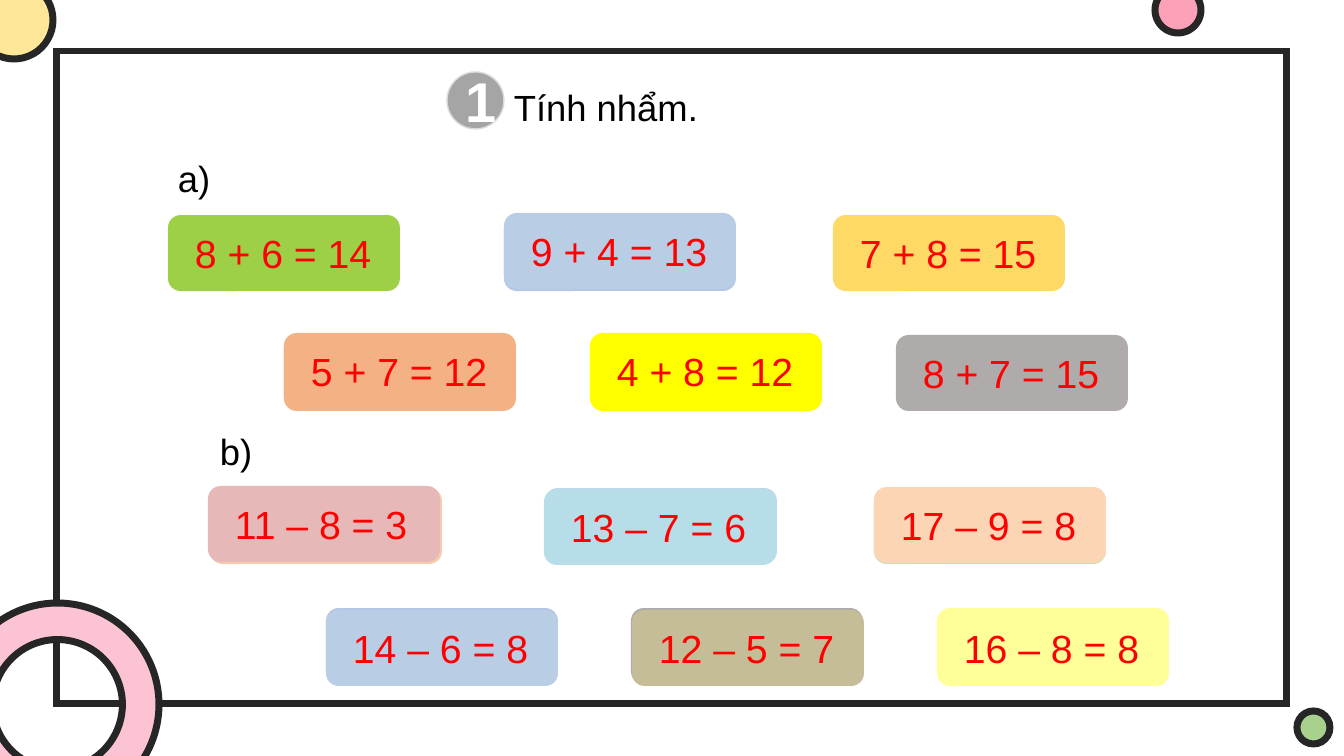
import pptx
import pptx.util
import pptx.dml.color
import pptx.enum.shapes
import pptx.enum.text
import pptx.oxml.ns
import lxml.etree

SHAPES = pptx.enum.shapes.MSO_SHAPE
ALIGN = pptx.enum.text.PP_ALIGN
ANCHOR = pptx.enum.text.MSO_ANCHOR
AUTO_SIZE = pptx.enum.text.MSO_AUTO_SIZE

CARD_WIDTH, CARD_HEIGHT = 232, 76

CARD_BACKS = [
    (284, 335, "F4B183"),
    (504, 215, "B4C7E7"),
    (590, 335, "FFFF00"),
    (210, 488, "F8CBAD"),
    (326, 608, "B4C7E7"),
    (545, 488, "BDD7EE"),
    (937, 608, "FFFF99"),
    (631, 608, "AFABAB"),
    (874, 488, "C5E0B4"),
]

CARDS = [
    (168, 215, "9DD046", "8 + 6 = 14"),
    (504, 213, "B9CDE5", "9 + 4 = 13"),
    (833, 215, "FFD966", "7 + 8 = 15"),
    (284, 333, "F4B183", "5 + 7 = 12"),
    (590, 333, "FFFF00", "4 + 8 = 12"),
    (896, 335, "AFABAB", "8 + 7 = 15"),
    (208, 486, "E6B9B8", "11 – 8 = 3"),
    (544, 489, "B7DEE8", "13 – 7 = 6"),
    (874, 487, "FCD5B5", "17 – 9 = 8"),
    (326, 610, "B9CDE5", "14 – 6 = 8"),
    (632, 610, "C4BD97", "12 – 5 = 7"),
    (937, 610, "FFFF99", "16 – 8 = 8"),
]


def px(length):
    return pptx.util.Emu(round(length * 914400 / 100.8))


def color(value):
    return pptx.dml.color.RGBColor.from_string(value)


class SlideBuilder:
    font_name = "Arial"
    ink = "262626"
    black = "000000"
    answer = "FF0000"

    def __init__(self, slide):
        self.slide = slide

    def shape(self, kind, left, top, width, height, fill=None, line=None, line_width=5):
        shape = self.slide.shapes.add_shape(kind, px(left), px(top), px(width), px(height))
        shape.shadow.inherit = False
        if fill:
            shape.fill.solid()
            shape.fill.fore_color.rgb = color(fill)
        else:
            shape.fill.background()
        if line:
            shape.line.color.rgb = color(line)
            shape.line.width = pptx.util.Pt(line_width)
            outline = shape.element.spPr.find(pptx.oxml.ns.qn("a:ln"))
            lxml.etree.SubElement(outline, pptx.oxml.ns.qn("a:miter"), lim="800000")
        else:
            shape.line.fill.background()
        return shape

    def set_text(self, shape, text, size, text_color, align, bold=False):
        paragraph = shape.text_frame.paragraphs[0]
        paragraph.text = text
        paragraph.alignment = align
        paragraph.font.name = self.font_name
        paragraph.font.size = pptx.util.Pt(size)
        paragraph.font.bold = bold
        paragraph.font.color.rgb = color(text_color)
        return paragraph

    def text_box(self, left, top, width, height, wrap):
        box = self.slide.shapes.add_textbox(px(left), px(top), px(width), px(height))
        box.text_frame.word_wrap = wrap
        box.text_frame.auto_size = AUTO_SIZE.SHAPE_TO_FIT_TEXT
        return box

    def label(self, left, top, width, text):
        box = self.text_box(left, top, width, 69, True)
        paragraph = self.set_text(box, text, 26, self.black, ALIGN.JUSTIFY)
        paragraph.line_spacing = 1.5

    def badge(self, left, top, size, text):
        shape = self.shape(SHAPES.OVAL, left, top, size, size, "A5A5A5", "DBDBDB", 1)
        shape.text_frame.vertical_anchor = ANCHOR.MIDDLE
        self.set_text(shape, text, 40, "FFFFFF", ALIGN.CENTER, True)

    def circle(self, left, top, size, fill):
        self.shape(SHAPES.OVAL, left, top, size, size, fill, self.ink)

    def ring(self, left, top, size, fill, thickness):
        shape = self.shape(SHAPES.DONUT, left, top, size, size, fill, self.ink)
        shape.adjustments[0] = thickness

    def card_back(self, left, top, fill):
        self.shape(SHAPES.ROUNDED_RECTANGLE, left, top, CARD_WIDTH, CARD_HEIGHT, fill)

    def card(self, left, top, fill, text):
        self.card_back(left, top, fill)
        box = self.text_box(left + 17, top + 9, 198, 57, False)
        self.set_text(box, text, 28, self.answer, ALIGN.LEFT)


def main():
    presentation = pptx.Presentation()
    presentation.slide_width = px(1344)
    presentation.slide_height = px(756)
    builder = SlideBuilder(presentation.slides.add_slide(presentation.slide_layouts[6]))

    builder.shape(SHAPES.RECTANGLE, 57, 51, 1230, 653, line=builder.ink)
    builder.circle(-25, -19, 78, "FFE799")
    builder.ring(-44, 603, 203, "FCC4D2", 0.18)
    builder.circle(1297, 711, 33, "A9D18E")
    builder.circle(1155, -13, 46, "FCA1B7")

    builder.badge(447, 72, 57, "1")
    builder.label(504, 58, 219, "Tính nhẩm.")
    builder.label(168, 129, 65, "a)")
    builder.label(210, 402, 65, "b)")

    for back in CARD_BACKS:
        builder.card_back(*back)
    for card in CARDS:
        builder.card(*card)

    presentation.save("out.pptx")


if __name__ == "__main__":
    main()
